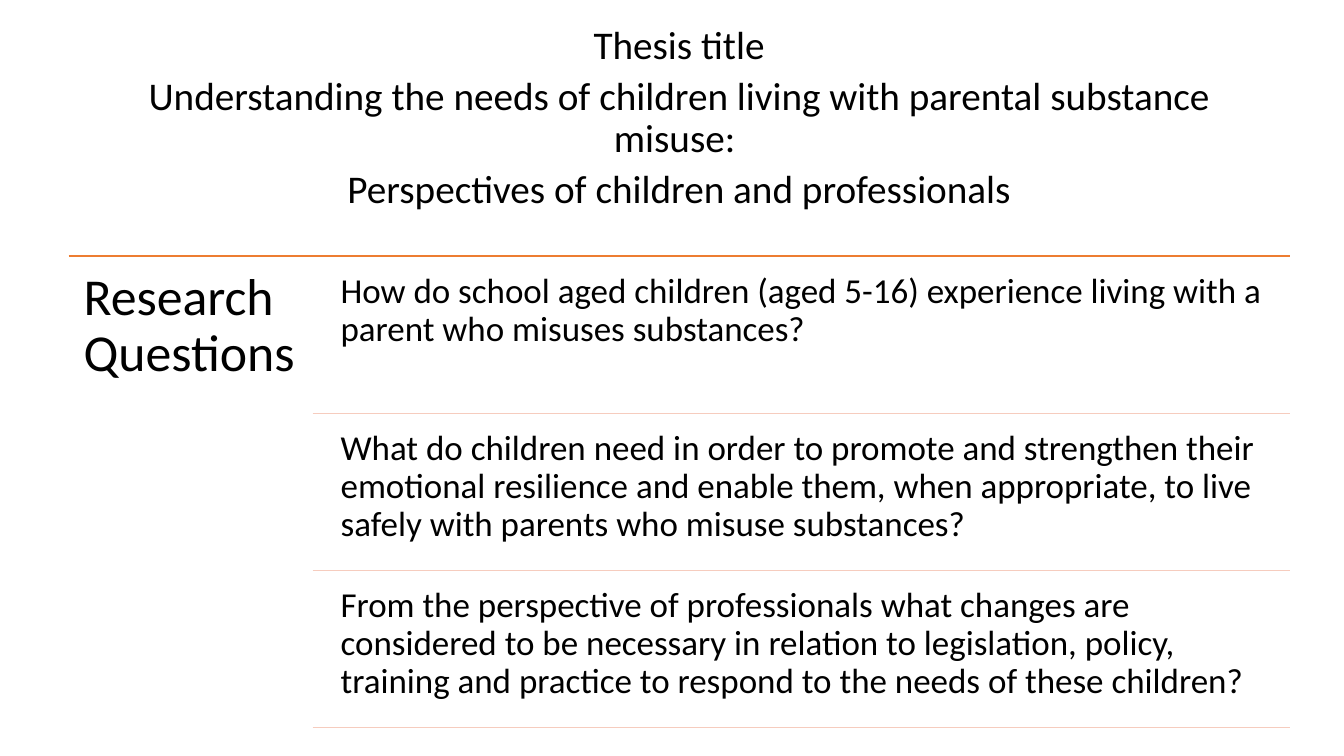
from pptx import Presentation
from pptx.dml.color import RGBColor as RGB
from pptx.enum.shapes import MSO_CONNECTOR as LINK
from pptx.enum.text import MSO_ANCHOR as ANCHOR, PP_ALIGN as ALIGN
from pptx.util import Inches, Pt
from lxml import etree

HUES = {"text": "000000", "head": "ED7D31", "rule": "F6CCBE"}
NS = "http://schemas.openxmlformats.org/drawingml/2006/main"

TITLE = [
    "Thesis title",
    "Understanding the needs of children living with parental substance misuse: ",
    "Perspectives of children and professionals",
]
ASKS = [
    "How do school aged children (aged 5-16) experience living with a parent "
    "who misuses substances?",
    "What do children need in order to promote and strengthen their emotional "
    "resilience and enable them, when appropriate, to live safely with parents "
    "who misuse substances?",
    "From the perspective of professionals what changes are considered to be "
    "necessary in relation to legislation, policy, training and practice to "
    "respond to the needs of these children?",
]


class Deck:
    font = "Calibri"

    def __init__(self):
        self.prs = Presentation()
        self.prs.slide_width = Inches(13.33)
        self.prs.slide_height = Inches(7.5)
        self.slide = self.prs.slides.add_slide(self.prs.slide_layouts[6])

    def text(self, lines, box, size, pad=(0.1, 0.05), align=ALIGN.LEFT,
             anchor=ANCHOR.TOP, after=0):
        shape = self.slide.shapes.add_textbox(*map(Inches, box))
        frame = shape.text_frame
        frame.word_wrap = True
        frame.vertical_anchor = anchor
        frame.margin_left = frame.margin_right = Inches(pad[0])
        frame.margin_top = frame.margin_bottom = Inches(pad[1])
        for i, line in enumerate(lines):
            para = frame.add_paragraph() if i else frame.paragraphs[0]
            para.alignment = align
            para.line_spacing = 0.9
            para.space_after = Pt(after)
            run = para.add_run()
            run.text = line
            run.font.name = self.font
            run.font.size = Pt(size)
            run.font.color.rgb = RGB.from_string(HUES["text"])

    def rule(self, left, right, top, hue):
        """Draw a level line."""
        line = self.slide.shapes.add_connector(
            LINK.STRAIGHT, Inches(left), Inches(top), Inches(right), Inches(top))
        line.line.color.rgb = RGB.from_string(HUES[hue])
        line.line.width = Pt(1)
        etree.SubElement(line._element.spPr, f"{{{NS}}}effectLst")


def main():
    deck = Deck()
    left, right, top = 0.68, 12.79, 2.54
    step, gap = 1.56, 0.07
    deck.text(TITLE, (0.75, 0.56, 11.97, 1.24), 28, align=ALIGN.CENTER,
              anchor=ANCHOR.MIDDLE, after=6)
    deck.rule(left, right, top, "head")
    deck.text(["Research Questions"], (left, top, 2.42, 4.76), 37, (0.15, 0.15))
    for i, ask in enumerate(ASKS):
        row = top + i * step
        deck.text([ask], (3.28, row + gap, 9.51, step - gap), 25, (0.1, 0.1))
        deck.rule(3.1, right, row + step, "rule")
    deck.prs.save("out.pptx")


if __name__ == "__main__":
    main()
